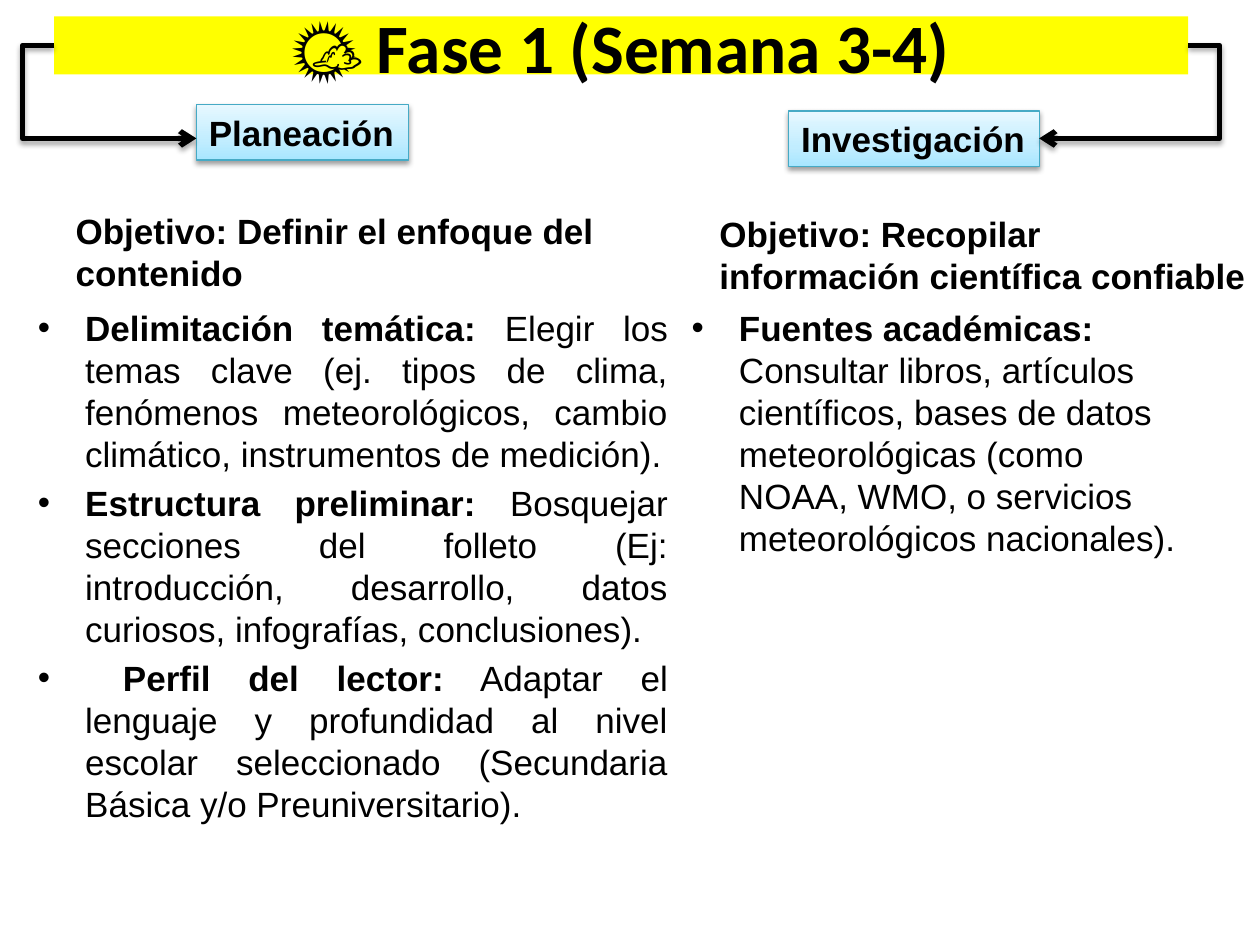
"""Build the slide for phase 1: planning and research, side by side."""
from copy import deepcopy
from dataclasses import dataclass

from lxml import etree
from pptx import Presentation
from pptx import util as u
from pptx.dml.color import RGBColor
from pptx.enum import shapes, text
from pptx.oxml import ns, parse_xml

BLACK = RGBColor(0x00, 0x00, 0x00)
YELLOW = RGBColor(0xFF, 0xFF, 0x00)
TEAL = RGBColor(0x46, 0xAA, 0xC5)
TAG_STOPS = (
    (0, RGBColor(0xA7, 0xE6, 0xFF)),
    (0.35, RGBColor(0xC1, 0xED, 0xFF)),
    (1, RGBColor(0xE7, 0xF8, 0xFF)),
)
LOOP = 0.635
ARROW_Y = 2.79


@dataclass
class Box:
    x: float
    y: float
    w: float
    h: float

    def lengths(self) -> list:
        return [u.Cm(v) for v in (self.x, self.y, self.w, self.h)]


@dataclass
class Column:
    tag: str
    tag_box: Box
    goal: str
    goal_box: Box
    items: list
    list_box: Box
    align: text.PP_ALIGN
    title_x: float
    tag_x: float


TITLE_BOX = Box(1.09, 0.33, 22.86, 1.17)
COLUMNS = [
    Column(
        "Planeación", Box(3.96, 2.11, 4.27, 1.12),
        "Objetivo: Definir el enfoque del contenido", Box(1.27, 4.27, 12.04, 1.78),
        [
            ("Delimitación temática:",
             " Elegir los temas clave (ej. tipos de clima, fenómenos meteorológicos, "
             "cambio climático, instrumentos de medición)."),
            ("Estructura preliminar:",
             " Bosquejar secciones del folleto (Ej: introducción, desarrollo, datos "
             "curiosos, infografías, conclusiones)."),
            (" Perfil del lector:",
             " Adaptar el lenguaje y profundidad al nivel escolar seleccionado "
             "(Secundaria Básica y/o Preuniversitario)."),
        ],
        Box(0.51, 6.05, 13.21, 10.97), text.PP_ALIGN.JUSTIFY, 1.09, 3.96,
    ),
    Column(
        "Investigación", Box(15.9, 2.24, 5.05, 1.12),
        "Objetivo: Recopilar\vinformación científica confiable", Box(14.25, 4.32, 11.23, 1.78),
        [
            ("Fuentes académicas:",
             " Consultar libros, artículos científicos, bases de datos meteorológicas "
             "(como NOAA, WMO, o servicios meteorológicos nacionales)."),
        ],
        Box(13.69, 6.05, 10.44, 10.97), text.PP_ALIGN.LEFT, 23.95, 20.95,
    ),
]


def style(p, size: float = 20, name: str = "Arial") -> None:
    for r in p.runs:
        r.font.size, r.font.name, r.font.bold = u.Pt(size), name, True
        r.font.color.rgb = BLACK


def place(sp, box: Box):
    sp.left, sp.top, sp.width, sp.height = box.lengths()
    sp.text_frame.auto_size = text.MSO_AUTO_SIZE.NONE
    return sp.text_frame


def add_shadow(sp, alpha: int, dist: int) -> None:
    sp._element.spPr.append(parse_xml(
        f'<a:effectLst {ns.nsdecls("a")}>'
        f'<a:outerShdw blurRad="40000" dist="{dist}" dir="5400000" rotWithShape="0">'
        f'<a:srgbClr val="{BLACK}"><a:alpha val="{alpha}000"/></a:srgbClr>'
        '</a:outerShdw></a:effectLst>'))


def add_tag(s, label: str, box: Box) -> None:
    sp = s.shapes.add_shape(shapes.MSO_SHAPE.RECTANGLE, *box.lengths())
    sp.fill.gradient()
    sp.fill.gradient_angle = 90
    stops = sp._element.spPr.find(".//" + ns.qn("a:gsLst"))
    stops.append(deepcopy(stops[-1]))
    for stop, (position, color) in zip(sp.fill.gradient_stops, TAG_STOPS):
        stop.position, stop.color.rgb = position, color
    sp.line.color.rgb, sp.line.width = TEAL, u.Pt(0.75)
    add_shadow(sp, 38, 20000)
    tf = sp.text_frame
    tf.word_wrap = False
    tf.auto_size = text.MSO_AUTO_SIZE.SHAPE_TO_FIT_TEXT
    tf.text = label
    tf.paragraphs[0].alignment = text.PP_ALIGN.LEFT
    style(tf.paragraphs[0])


def add_arrow(s, start: float, end: float) -> None:
    y = TITLE_BOX.y + TITLE_BOX.h / 2
    c = s.shapes.add_connector(
        shapes.MSO_CONNECTOR.ELBOW, u.Cm(start), u.Cm(y), u.Cm(end), u.Cm(ARROW_Y))
    c.line.color.rgb, c.line.width = BLACK, u.Pt(3)
    bend = round(-LOOP / abs(end - start) * 100000)
    guides = c._element.spPr.find(".//" + ns.qn("a:avLst"))
    etree.SubElement(guides, ns.qn("a:gd"), name="adj1", fmla=f"val {bend}")
    etree.SubElement(c.line._get_or_add_ln(), ns.qn("a:tailEnd"), type="arrow")
    add_shadow(c, 35, 23000)


def fill_column(s, col: Column, goal, items) -> None:
    tf = place(goal, col.goal_box)
    tf.text = col.goal
    style(tf.paragraphs[0])
    tf = place(items, col.list_box)
    tf.text = "\n".join(lead for lead, _ in col.items)
    for p, (_, detail) in zip(tf.paragraphs, col.items):
        p.alignment = col.align
        p.add_run().text = detail
        style(p)
        p.runs[-1].font.bold = False


def main() -> None:
    prs = Presentation()
    prs.slide_width, prs.slide_height = u.Cm(25.4), u.Cm(19.05)
    s = prs.slides.add_slide(prs.slide_layouts.get_by_name("Comparison"))
    title, *bodies = s.placeholders
    title.fill.solid()
    title.fill.fore_color.rgb = YELLOW
    tf = place(title, TITLE_BOX)
    tf.text = "🌤 Fase 1 (Semana 3-4)"
    style(tf.paragraphs[0], 39.6, "Calibri")
    for col, goal, items in zip(COLUMNS, bodies[::2], bodies[1::2]):
        fill_column(s, col, goal, items)
    for col in COLUMNS:
        add_tag(s, col.tag, col.tag_box)
    for col in COLUMNS:
        add_arrow(s, col.title_x, col.tag_x)
    prs.save("out.pptx")


if __name__ == "__main__":
    main()
